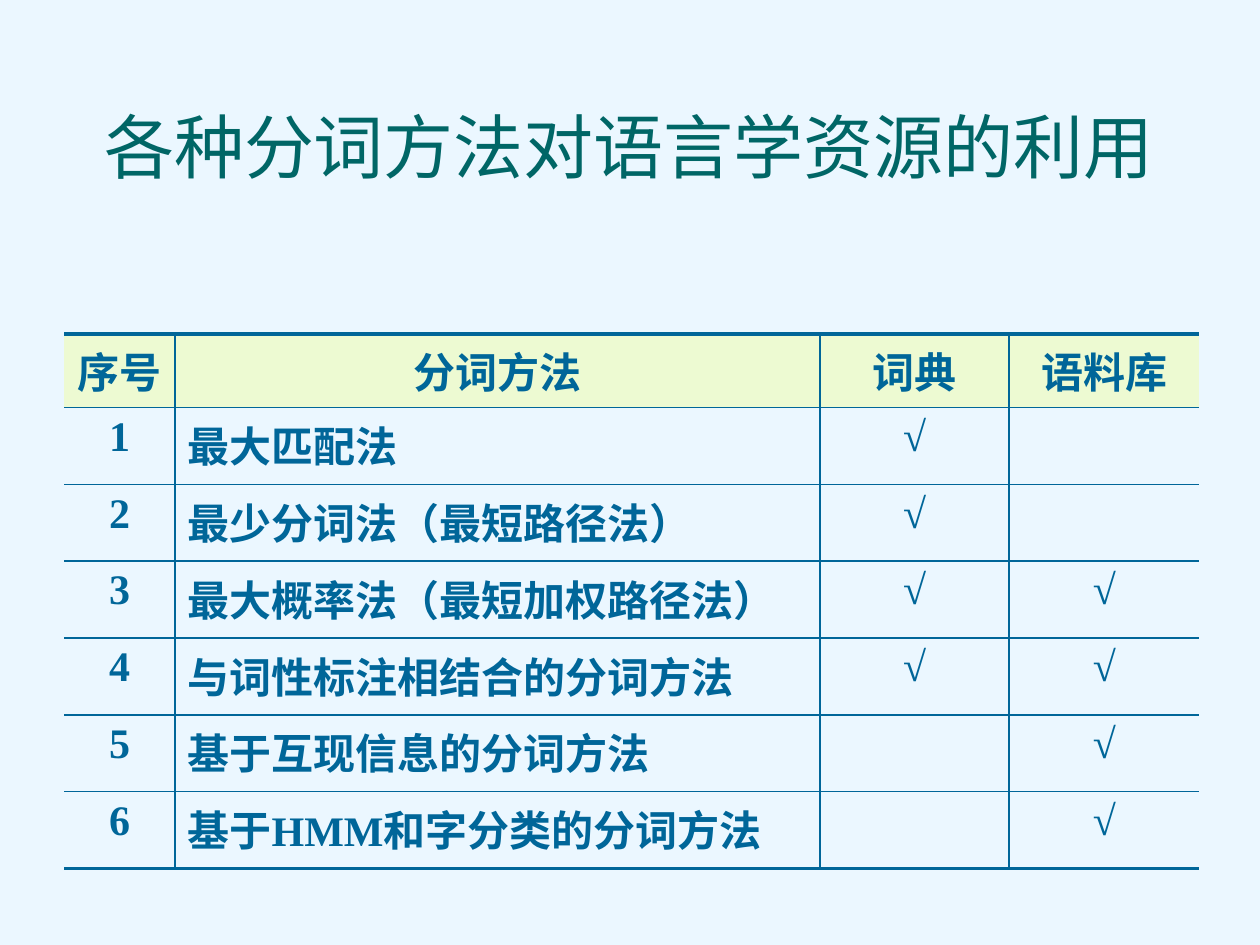
from lxml import etree
from pptx import Presentation
from pptx.dml.color import RGBColor
from pptx.enum.text import MSO_ANCHOR, MSO_AUTO_SIZE, PP_ALIGN
from pptx.oxml.ns import qn
from pptx.util import Inches, Pt

CENTER, LEFT = PP_ALIGN.CENTER, PP_ALIGN.LEFT
TOP, BOTTOM = MSO_ANCHOR.TOP, MSO_ANCHOR.BOTTOM
NO_AUTOFIT = MSO_AUTO_SIZE.NONE
TITLE_ONLY = 5

COLORS = {
    "background": "EBF7FF",
    "title": "006666",
    "table": "006699",
    "header": "EDFAD2",
}
FONT = "Times New Roman"
TITLE_FONT = {"name": FONT, "size": Pt(40), "bold": False}
CELL_FONT = {"name": FONT, "size": Pt(24), "bold": True}

OUTER_LINE, INNER_LINE = 2.25, 1
COLUMN_WIDTHS = [0.88, 5.12, 1.5, 1.51]
HEADER_HEIGHT, METHOD_HEIGHT = 0.58, 0.61
METHOD_COLUMN = 1

HEADINGS = ["序号", "分词方法", "词典", "语料库"]
# Method, uses a dictionary, uses a corpus
METHODS = [
    ("最大匹配法", True, False),
    ("最少分词法（最短路径法）", True, False),
    ("最大概率法（最短加权路径法）", True, True),
    ("与词性标注相结合的分词方法", True, True),
    ("基于互现信息的分词方法", False, True),
    ("基于HMM和字分类的分词方法", False, True),
]


def rgb(name):
    return RGBColor.from_string(COLORS[name])


def set_format(target, values):
    for attribute, value in values.items():
        setattr(target, attribute, value)


def write(paragraph, text, font_format, color):
    run = paragraph.add_run()
    run.text = text
    set_format(run.font, font_format)
    run.font.color.rgb = rgb(color)


def set_space_before(paragraph, percent):
    properties = paragraph._p.get_or_add_pPr()
    spacing = etree.SubElement(properties, qn("a:spcBef"))
    etree.SubElement(spacing, qn("a:spcPct"), val=str(percent * 1000))


def set_border(cell, side, width):
    """Draw one side of a cell; a width of 0 leaves it open."""
    line = etree.SubElement(cell._tc.get_or_add_tcPr(), qn(f"a:ln{side}"),
                            w=str(Pt(width)))
    if width:
        fill = etree.SubElement(line, qn("a:solidFill"))
        etree.SubElement(fill, qn("a:srgbClr"), val=COLORS["table"])
    else:
        etree.SubElement(line, qn("a:noFill"))


def add_title(slide, text):
    title = slide.shapes.title
    set_format(title, {"left": Inches(0.48), "top": Inches(0.11),
                       "width": Inches(9.02), "height": Inches(1.44)})
    set_format(title.text_frame, {"vertical_anchor": BOTTOM, "word_wrap": True,
                                  "auto_size": NO_AUTOFIT})
    paragraph = title.text_frame.paragraphs[0]
    set_format(paragraph, {"alignment": CENTER, "line_spacing": 0.9})
    write(paragraph, text, TITLE_FONT, "title")


def fill_cell(cell, text, alignment, is_header):
    cell.vertical_anchor = TOP
    if is_header:
        cell.fill.solid()
        cell.fill.fore_color.rgb = rgb("header")
    else:
        cell.fill.background()
    if text:
        paragraph = cell.text_frame.paragraphs[0]
        paragraph.alignment = alignment
        set_space_before(paragraph, 20)
        write(paragraph, text, CELL_FONT, "table")


def add_method_table(slide):
    rows = [HEADINGS]
    for number, (method, *resources) in enumerate(METHODS, 1):
        rows.append([str(number), method]
                    + ["√" if used else "" for used in resources])
    heights = [HEADER_HEIGHT] + [METHOD_HEIGHT] * len(METHODS)
    table = slide.shapes.add_table(
        len(rows), len(HEADINGS), Inches(0.51), Inches(2.65),
        Inches(sum(COLUMN_WIDTHS)), Inches(sum(heights))).table
    set_format(table, {"first_row": False, "horz_banding": False})

    for column, width in zip(table.columns, COLUMN_WIDTHS):
        column.width = Inches(width)
    for row, height in zip(table.rows, heights):
        row.height = Inches(height)

    last_row, last_column = len(rows) - 1, len(HEADINGS) - 1
    for r, texts in enumerate(rows):
        for c, text in enumerate(texts):
            cell = table.cell(r, c)
            # Open at the sides, heavy rules above and below
            borders = {
                "L": INNER_LINE if c > 0 else 0,
                "R": INNER_LINE if c < last_column else 0,
                "T": INNER_LINE if r > 0 else OUTER_LINE,
                "B": INNER_LINE if r < last_row else OUTER_LINE,
            }
            for side, width in borders.items():
                set_border(cell, side, width)
            is_header = r == 0
            is_method = c == METHOD_COLUMN and not is_header
            fill_cell(cell, text, LEFT if is_method else CENTER, is_header)


def main():
    presentation = Presentation()
    set_format(presentation, {"slide_width": Inches(10),
                              "slide_height": Inches(7.5)})
    slide = presentation.slides.add_slide(
        presentation.slide_layouts[TITLE_ONLY])
    slide.background.fill.solid()
    slide.background.fill.fore_color.rgb = rgb("background")

    add_title(slide, "各种分词方法对语言学资源的利用")
    add_method_table(slide)
    presentation.save("out.pptx")


if __name__ == "__main__":
    main()
